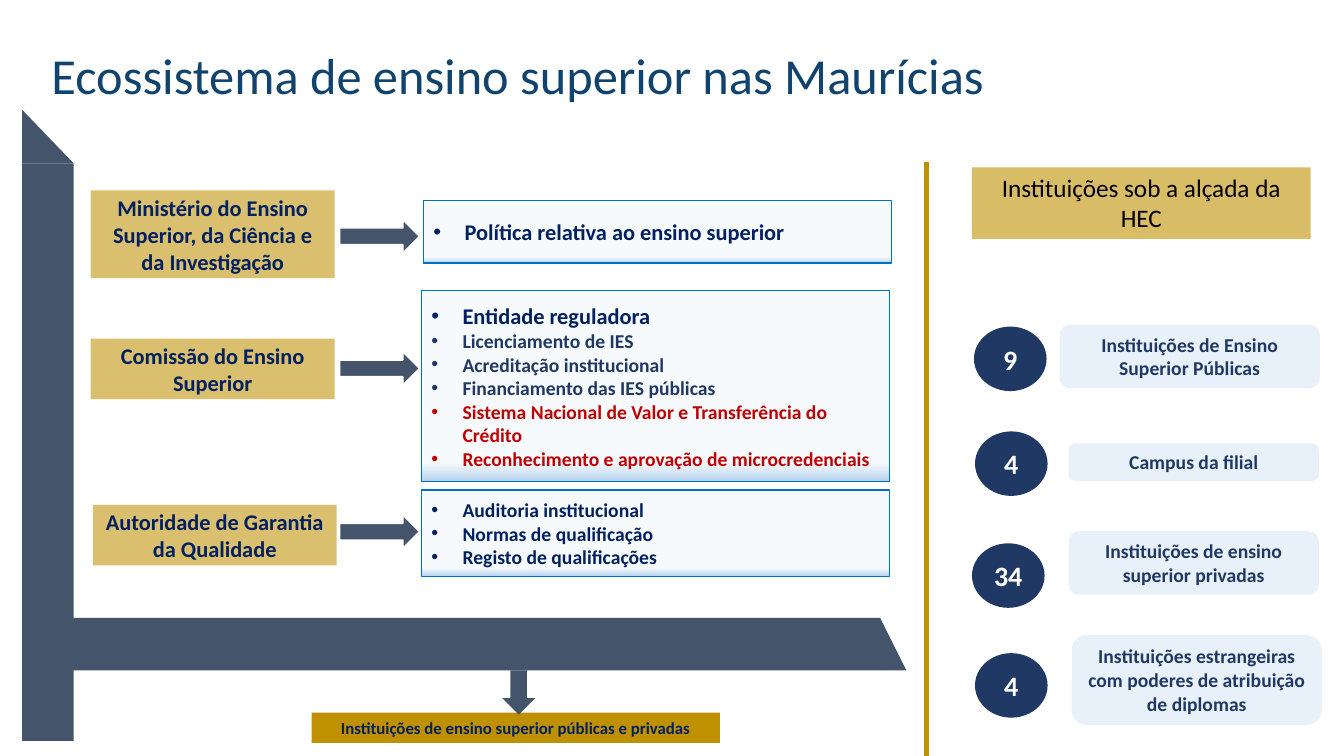
from lxml.etree import SubElement
from pptx import Presentation
from pptx.dml.color import RGBColor
from pptx.enum.shapes import MSO_CONNECTOR, MSO_SHAPE as Geo
from pptx.enum.text import MSO_ANCHOR as Anchor, MSO_AUTO_SIZE as AutoSize, PP_ALIGN as Align
from pptx.oxml.ns import qn
from pptx.util import Inches, Pt

SLATE, GOLD, NAVY, INDIGO = "44546A", "BF9000", "002060", "203864"
RED, BLUE, WHITE, PALE = "C00000", "0070C0", "FFFFFF", "DEEBF7"

BODIES = [
    ("Ministério do Ensino Superior, da Ciência e da Investigação", (0.9, 1.89, 2.42, 0.87), 2.18),
    ("Comissão do Ensino Superior", (0.9, 3.36, 2.42, 0.6), 3.49),
    ("Autoridade de Garantia da Qualidade", (0.92, 5.01, 2.42, 0.6), 5.11),
]
ROLES = [
    ((4.2, 1.99, 4.64, 0.62), [("Política relativa ao ensino superior", 16, NAVY)]),
    ((4.18, 2.88, 4.64, 1.9), [
        ("Entidade reguladora", 16, NAVY),
        ("Licenciamento de IES", 14, INDIGO),
        ("Acreditação institucional", 14, INDIGO),
        ("Financiamento das IES públicas", 14, INDIGO),
        ("Sistema Nacional de Valor e Transferência do Crédito", 14, RED),
        ("Reconhecimento e aprovação de microcredenciais", 14, RED),
    ]),
    ((4.18, 4.86, 4.64, 0.86), [
        ("Auditoria institucional", 14, NAVY),
        ("Normas de qualificação", 14, NAVY),
        ("Registo de qualificações", 14, NAVY),
    ]),
]
INSTITUTIONS = [
    ("9", (9.66, 3.24), "Instituições de Ensino Superior Públicas", (10.51, 3.22, 2.58, 0.63)),
    ("4", (9.67, 4.28), "Campus da filial", (10.6, 4.4, 2.48, 0.37)),
    ("34", (9.64, 5.39), "Instituições de ensino superior privadas", (10.6, 5.27, 2.48, 0.63)),
    ("4", (9.67, 6.48), "Instituições estrangeiras com poderes de atribuição de diplomas",
     (10.63, 6.3, 2.48, 0.89)),
]


def rgb(code):
    return RGBColor.from_string(code)


def apply_format(target, values):
    for name, value in values.items():
        setattr(target, name, value)


def style_font(font, size, color, bold=True):
    apply_format(font, {"name": "Calibri", "size": Pt(size), "bold": bold})
    font.color.rgb = rgb(color)


def add_block(slide, geometry, place, fill=None, alpha=None, outline=None):
    block = slide.shapes.add_shape(geometry, *map(Inches, place))
    block.shadow.inherit = False
    if fill:
        block.fill.solid()
        block.fill.fore_color.rgb = rgb(fill)
    if alpha:
        color = block.fill._xPr.find(qn("a:solidFill"))[0]
        SubElement(color, qn("a:alpha"), val=str(alpha * 1000))
    if outline:
        block.line.color.rgb = rgb(outline)
        block.line.width = Pt(1)
    else:
        block.line.fill.background()
    return block


def add_label(slide, geometry, place, text, size, color, fill, alpha=None, bold=True, grow=False):
    label = add_block(slide, geometry, place, fill, alpha)
    frame = label.text_frame
    apply_format(frame, {
        "word_wrap": True,
        "vertical_anchor": Anchor.TOP if grow else Anchor.MIDDLE,
        "auto_size": AutoSize.SHAPE_TO_FIT_TEXT if grow else AutoSize.NONE,
    })
    paragraph = frame.paragraphs[0]
    paragraph.text = text
    paragraph.alignment = Align.CENTER
    style_font(paragraph.runs[0].font, size, color, bold)


def add_role_list(slide, place, roles):
    panel = add_block(slide, Geo.RECTANGLE, place, outline=BLUE)
    panel.fill.gradient()
    panel.fill.gradient_angle = 270
    for stop, (position, color) in zip(panel.fill.gradient_stops, [(0.9, "F7FAFD"), (1, "B5D2EC")]):
        stop.position = position
        stop.color.rgb = rgb(color)
    frame = panel.text_frame
    apply_format(frame, {"word_wrap": True, "vertical_anchor": Anchor.MIDDLE})
    for index, (role, size, color) in enumerate(roles):
        paragraph = frame.add_paragraph() if index else frame.paragraphs[0]
        paragraph.text = role
        paragraph.alignment = Align.LEFT
        properties = paragraph._p.get_or_add_pPr()
        properties.set("marL", str(Inches(0.31)))
        properties.set("indent", str(Inches(-0.31)))
        SubElement(properties, qn("a:buFont"), typeface="Arial")
        SubElement(properties, qn("a:buChar"), char="•")
        style_font(paragraph.runs[0].font, size, color)


def add_title(slide, text):
    title = slide.shapes.title
    apply_format(title, {"left": Inches(0.41), "top": Inches(0.05),
                         "width": Inches(10.01), "height": Inches(1.45)})
    title.text_frame.text = text
    title.text_frame.vertical_anchor = Anchor.MIDDLE
    paragraph = title.text_frame.paragraphs[0]
    apply_format(paragraph, {"alignment": Align.LEFT, "line_spacing": 0.9})
    style_font(paragraph.runs[0].font, 36, "10436D", False)


def add_divider(slide, x, top, bottom):
    divider = slide.shapes.add_connector(
        MSO_CONNECTOR.STRAIGHT, Inches(x), Inches(top), Inches(x), Inches(bottom))
    divider.line.color.rgb = rgb(GOLD)
    divider.line.width = Pt(3)
    SubElement(divider._element.spPr, qn("a:effectLst"))


def main():
    deck = Presentation()
    deck.slide_width, deck.slide_height = Inches(13.33), Inches(7.5)
    slide = deck.slides.add_slide(deck.slide_layouts[5])

    for geometry, place in [
        (Geo.RIGHT_TRIANGLE, (0.22, 1.09, 0.51, 0.53)),
        (Geo.RECTANGLE, (0.22, 1.62, 0.51, 5.73)),
        (Geo.RIGHT_TRIANGLE, (8.73, 6.13, 0.26, 0.52)),
        (Geo.RECTANGLE, (0.23, 6.13, 8.5, 0.52)),
    ]:
        add_block(slide, geometry, place, SLATE)

    add_title(slide, "Ecossistema de ensino superior nas Maurícias")
    add_label(slide, Geo.RECTANGLE, (3.09, 7.07, 4.05, 0.3),
              "Instituições de ensino superior públicas e privadas", 12, NAVY, GOLD, grow=True)

    for place, roles in ROLES:
        add_role_list(slide, place, roles)
    for name, place, arrow_top in BODIES:
        add_block(slide, Geo.RIGHT_ARROW, (3.37, arrow_top, 0.79, 0.33), SLATE, outline=WHITE)
        add_label(slide, Geo.RECTANGLE, place, name, 16, NAVY, GOLD, 57)
    add_block(slide, Geo.DOWN_ARROW, (4.98, 6.65, 0.33, 0.44), SLATE)

    add_divider(slide, 9.19, 1.61, 7.5)
    add_label(slide, Geo.RECTANGLE, (9.64, 1.66, 3.36, 0.71),
              "Instituições sob a alçada da HEC", 18, "000000", GOLD, 60, bold=False, grow=True)
    for count, corner, kind, place in INSTITUTIONS:
        add_label(slide, Geo.ROUNDED_RECTANGLE, place, kind, 14, INDIGO, PALE, 67, grow=True)
        add_label(slide, Geo.OVAL, (*corner, 0.72, 0.64), count, 20, WHITE, INDIGO)

    deck.save("out.pptx")


if __name__ == "__main__":
    main()
